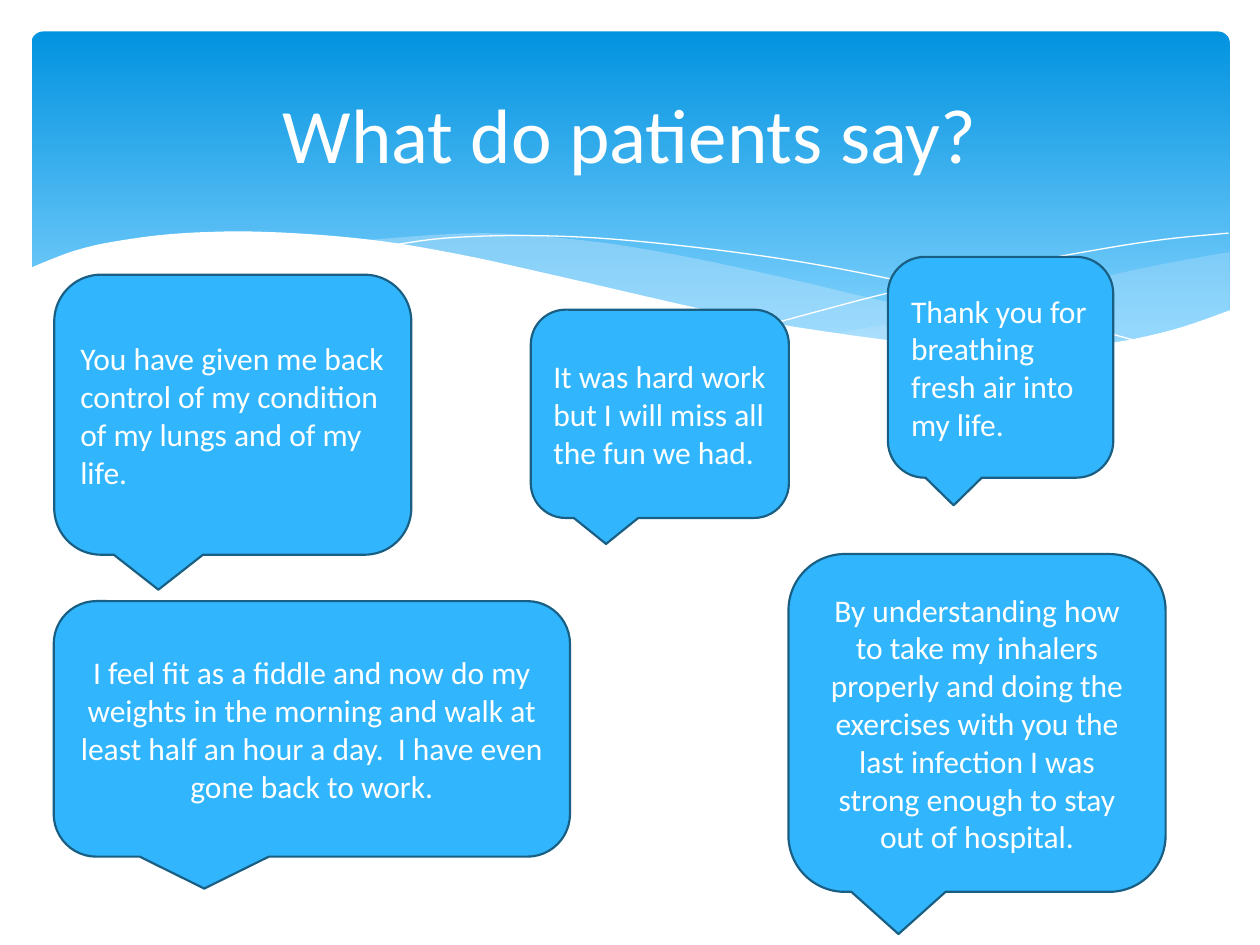
from lxml import etree
from pptx import Presentation
from pptx import util as u
from pptx.dml.color import RGBColor
from pptx.enum import shapes, text
from pptx.oxml import ns

Pt = u.Pt
FONT = "Calibri"
COLOURS = {
    "white": "FFFFFF",
    "sky_top": "0293E0",
    "sky_bottom": "83D3FE",
    "mist": "C6E7FC",
    "bubble": "31B6FD",
    "outline": "195F84",
}

# Key points of the waves, in points; smooth() draws curves through them
RIGHT_TOP = [(702.7, 144), (663.1, 151.2), (619.9, 160.6), (542.2, 178.6),
             (475.9, 190.8)]
RIGHT_BOTTOM = [(475.9, 190.8), (507.6, 195.1), (545, 198.7), (586.1, 200.2),
                (627.8, 197.3), (668.2, 189.4), (702.7, 177.8)]
MIDDLE_TOP = [(643, 196.6), (581, 187.2), (508.3, 172.8), (452.9, 159.8),
              (389.5, 146.2), (334.8, 137.5), (273.6, 133.2), (205.9, 137.5)]
MIDDLE_BOTTOM = [(205.9, 137.5), (260.6, 146.2), (323.3, 159.8),
                 (381.6, 172.8), (445, 185.8), (500.4, 194.4),
                 (556.6, 199.4), (596.2, 200.2), (643, 196.6)]
FALLING_LINE = [(222.5, 140.4), (254.2, 136.1), (299.5, 134.6), (352.1, 136.8),
                (419, 144), (478.8, 153.4), (547.2, 167.8), (598.3, 180.7),
                (653, 195.8)]
RISING_LINE = [(441.4, 185), (500.4, 169.2), (558.7, 155.5), (623.5, 143.3),
               (665.3, 136.8), (702, 133.2)]
FRONT_EDGE = [(703.4, 177.1), (669.6, 188.6), (630, 196.6), (582.5, 199.4),
              (535.7, 197.3), (481, 190.8), (416.9, 180), (321.8, 158.4),
              (262.8, 145.4), (210.2, 136.8), (151.9, 132.5), (105.1, 133.2),
              (68.4, 137.5), (42.5, 143.3), (16.6, 153.4)]
FRONT_CORNERS = [(16.6, 236.9), (703.4, 236.9)]

LEFT, CENTRE = text.PP_ALIGN.LEFT, text.PP_ALIGN.CENTER
# Left, top, width, height, alignment, words
QUOTES = [
    (31, 157, 204, 160, LEFT,
     "You have given me back control of my condition of my lungs and of my life."),
    (450.6, 316.6, 215.5, 193, CENTRE,
     "By understanding how to take my inhalers properly and doing the exercises "
     "with you the last infection I was strong enough to stay out of hospital."),
    (30.7, 343.5, 295, 146, CENTRE,
     "I feel fit as a fiddle and now do my weights in the morning and walk at "
     "least half an hour a day.  I have even gone back to work."),
    (303.3, 177, 147.5, 119, LEFT,
     "It was hard work but I will miss all the fun we had."),
    (507.4, 146.8, 128.8, 126.2, LEFT,
     "Thank you for breathing fresh air into my life."),
]


def rgb(name):
    return RGBColor.from_string(COLOURS[name])


def smooth(points, steps=6):
    """Points along a Catmull-Rom curve through the key points."""
    padded = [points[0], *points, points[-1]]
    curve = [points[0]]
    for a, b, c, d in zip(padded, padded[1:], padded[2:], padded[3:]):
        for i in range(1, steps + 1):
            t = i / steps
            curve.append(tuple(
                0.5 * (2 * q + (r - p) * t + (2 * p - 5 * q + 4 * r - s) * t**2
                       + (3 * q - p - 3 * r + s) * t**3)
                for p, q, r, s in zip(a, b, c, d)))
    return curve


def add_outline(s, points, close):
    emu = [(Pt(x), Pt(y)) for x, y in points]
    builder = s.shapes.build_freeform(*emu[0])
    builder.add_line_segments(emu[1:], close=close)
    sp = builder.convert_to_shape()
    sp.shadow.inherit = False
    return sp


def add_wave(s, points, colour, opacity=100):
    sp = add_outline(s, points, True)
    sp.fill.solid()
    sp.fill.fore_color.rgb = rgb(colour)
    sp.line.fill.background()
    if opacity < 100:
        clr = sp.fill._xPr.find(".//" + ns.qn("a:srgbClr"))
        etree.SubElement(clr, ns.qn("a:alpha"), val=str(opacity * 1000))


def add_hairline(s, points):
    sp = add_outline(s, smooth(points), False)
    sp.fill.background()
    sp.line.color.rgb = rgb("white")
    sp.line.width = Pt(0)


def add_sky(s):
    sp = s.shapes.add_shape(shapes.MSO_SHAPE.ROUNDED_RECTANGLE,
                            Pt(18), Pt(18), Pt(684.7), Pt(194.4))
    sp.adjustments[0] = 0.034
    sp.shadow.inherit = False
    sp.line.fill.background()
    sp.fill.gradient()
    sp.fill.gradient_angle = 270
    stops = zip(sp.fill.gradient_stops, (0, 0.9), ("sky_top", "sky_bottom"))
    for stop, position, colour in stops:
        stop.position = position
        stop.color.rgb = rgb(colour)


def write(sp, words, size, align):
    tf = sp.text_frame
    tf.word_wrap = True
    tf.vertical_anchor = text.MSO_ANCHOR.MIDDLE
    p = tf.paragraphs[0]
    p.alignment = align
    r = p.add_run()
    r.text = words
    r.font.name = FONT
    r.font.size = Pt(size)
    r.font.color.rgb = rgb("white")


def add_title(s, words):
    sp = s.shapes.add_textbox(Pt(36), Pt(26.6), Pt(648), Pt(98.6))
    write(sp, words, 44, CENTRE)


def add_bubble(s, left, top, width, height, align, words):
    sp = s.shapes.add_shape(shapes.MSO_SHAPE.ROUNDED_RECTANGULAR_CALLOUT,
                            Pt(left), Pt(top), Pt(width), Pt(height))
    sp.shadow.inherit = False
    sp.fill.solid()
    sp.fill.fore_color.rgb = rgb("bubble")
    sp.line.color.rgb = rgb("outline")
    sp.line.width = Pt(1.25)
    write(sp, words, 18, align)


def main():
    prs = Presentation()
    prs.slide_width, prs.slide_height = Pt(720), Pt(540)
    s = prs.slides.add_slide(prs.slide_layouts[6])

    # Sky with waves
    add_sky(s)
    add_wave(s, smooth(RIGHT_TOP) + smooth(RIGHT_BOTTOM), "mist", 29)
    add_wave(s, smooth(MIDDLE_TOP) + smooth(MIDDLE_BOTTOM), "mist", 40)
    add_hairline(s, FALLING_LINE)
    add_hairline(s, RISING_LINE)
    add_wave(s, smooth(FRONT_EDGE) + FRONT_CORNERS, "white")

    # Title and patient quotes
    add_title(s, "What do patients say?")
    for quote in QUOTES:
        add_bubble(s, *quote)

    prs.save("out.pptx")


if __name__ == "__main__":
    main()
